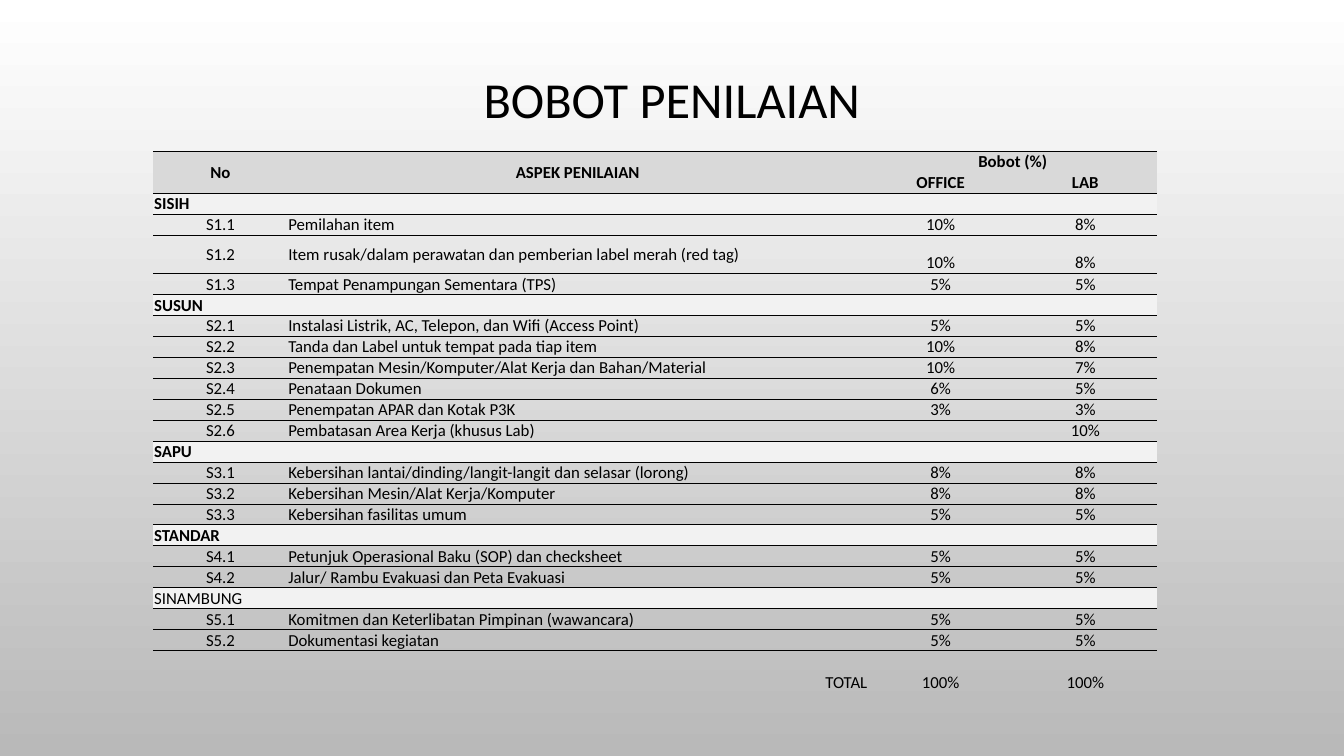
from dataclasses import dataclass
from typing import Optional

from lxml import etree
from pptx import Presentation
from pptx.dml.color import RGBColor
from pptx.enum.text import MSO_ANCHOR, PP_ALIGN
from pptx.oxml.ns import qn
from pptx.slide import Slide
from pptx.table import Table, _Cell
from pptx.util import Pt

LEFT, CENTER, RIGHT = PP_ALIGN.LEFT, PP_ALIGN.CENTER, PP_ALIGN.RIGHT
MIDDLE, BOTTOM = MSO_ANCHOR.MIDDLE, MSO_ANCHOR.BOTTOM


@dataclass(frozen=True)
class Theme:
    font: str = "Calibri"
    title_size: float = 36
    body_size: float = 12
    ink: str = "000000"
    header: str = "D9D9D9"
    section: str = "F2F2F2"
    bg_top: str = "FFFFFF"
    bg_bottom: str = "B9B9B9"
    rule_width: float = 0.5
    cell_inset: float = 0.55


@dataclass(frozen=True)
class Aspect:
    name: str
    office: str
    lab: str
    height: float = 14.94


@dataclass(frozen=True)
class Section:
    name: str
    aspects: tuple[Aspect, ...]
    span: int = 2
    bold: bool = True


THEME = Theme()
COLUMN_WIDTHS = (95.8, 414.7, 103.7, 103)
ROW_HEIGHT = 14.94
SECTIONS = (
    Section("SISIH", (
        Aspect("Pemilahan item", "10%", "8%"),
        Aspect("Item rusak/dalam perawatan dan pemberian label merah (red tag)", "10%", "8%", 27.4),
        Aspect("Tempat Penampungan Sementara (TPS)", "5%", "5%"),
    ), span=4),
    Section("SUSUN", (
        Aspect("Instalasi Listrik, AC, Telepon, dan Wifi (Access Point)", "5%", "5%"),
        Aspect("Tanda dan Label untuk tempat pada tiap item", "10%", "8%"),
        Aspect("Penempatan Mesin/Komputer/Alat Kerja dan Bahan/Material", "10%", "7%"),
        Aspect("Penataan Dokumen", "6%", "5%"),
        Aspect("Penempatan APAR dan Kotak P3K", "3%", "3%"),
        Aspect("Pembatasan Area Kerja (khusus Lab)", "", "10%"),
    ), span=4),
    Section("SAPU", (
        Aspect("Kebersihan lantai/dinding/langit-langit dan selasar (lorong)", "8%", "8%"),
        Aspect("Kebersihan Mesin/Alat Kerja/Komputer", "8%", "8%"),
        Aspect("Kebersihan fasilitas umum", "5%", "5%"),
    )),
    Section("STANDAR", (
        Aspect("Petunjuk Operasional Baku (SOP) dan checksheet", "5%", "5%"),
        Aspect("Jalur/ Rambu Evakuasi dan Peta Evakuasi", "5%", "5%"),
    )),
    Section("SINAMBUNG", (
        Aspect("Komitmen dan Keterlibatan Pimpinan (wawancara)", "5%", "5%"),
        Aspect("Dokumentasi kegiatan", "5%", "5%"),
    ), bold=False),
)


def add_run(p, text: str, size: float, bold: bool = False) -> None:
    r = p.add_run()
    r.text = text
    r.font.name = THEME.font
    r.font.size = Pt(size)
    r.font.bold = bold
    r.font.color.rgb = RGBColor.from_string(THEME.ink)


def set_borders(cell: _Cell, edges: str) -> None:
    tc_pr = cell._tc.get_or_add_tcPr()
    for edge in "LRTB":
        ln = etree.SubElement(tc_pr, qn(f"a:ln{edge}"), w=str(Pt(THEME.rule_width)))
        if edge in edges:
            fill = etree.SubElement(ln, qn("a:solidFill"))
            etree.SubElement(fill, qn("a:srgbClr"), val=THEME.ink)
        else:
            etree.SubElement(ln, qn("a:noFill"))


def style_cell(cell: _Cell, edges: str, fill: Optional[str]) -> None:
    set_borders(cell, edges)
    if fill:
        cell.fill.solid()
        cell.fill.fore_color.rgb = RGBColor.from_string(fill)
    else:
        cell.fill.background()
    cell.margin_left = cell.margin_right = cell.margin_top = Pt(THEME.cell_inset)
    cell.margin_bottom = Pt(0)


def style_row(table: Table, row: int, edges: str, fill: Optional[str] = None) -> None:
    for col in range(len(COLUMN_WIDTHS)):
        style_cell(table.cell(row, col), edges, fill)


def write(cell: _Cell, text: str, align=CENTER, anchor=MIDDLE, bold: bool = False) -> None:
    cell.vertical_anchor = anchor
    p = cell.text_frame.paragraphs[0]
    p.alignment = align
    if text:
        add_run(p, text, THEME.body_size, bold)


def size_empty_cells(table: Table) -> None:
    for cell in table.iter_cells():
        p = cell.text_frame.paragraphs[0]
        if not p.runs:
            etree.SubElement(p._p, qn("a:endParaRPr"), sz=str(int(THEME.body_size * 100)))


def write_header(table: Table) -> None:
    style_row(table, 0, "T", THEME.header)
    style_row(table, 1, "B", THEME.header)
    for col, label in enumerate(("No", "ASPEK PENILAIAN")):
        cell = table.cell(0, col)
        cell.merge(table.cell(1, col))
        write(cell, label, bold=True)
    table.cell(0, 2).merge(table.cell(0, 3))
    write(table.cell(0, 2), "Bobot (%)", bold=True)
    for col, label in enumerate(("OFFICE", "LAB"), 2):
        write(table.cell(1, col), label, bold=True)


def write_section(table: Table, row: int, number: int, section: Section) -> int:
    style_row(table, row, "TB", THEME.section)
    cell = table.cell(row, 0)
    cell.merge(table.cell(row, section.span - 1))
    write(cell, section.name, LEFT, bold=section.bold)
    for index, aspect in enumerate(section.aspects, 1):
        row += 1
        style_row(table, row, "TB")
        table.rows[row].height = Pt(aspect.height)
        write(table.cell(row, 0), f"S{number}.{index}")
        write(table.cell(row, 1), aspect.name, LEFT)
        write(table.cell(row, 2), aspect.office, anchor=BOTTOM)
        write(table.cell(row, 3), aspect.lab, anchor=BOTTOM)
    return row + 1


def write_total(table: Table, row: int) -> None:
    style_row(table, row, "T")
    style_row(table, row + 1, "")
    write(table.cell(row + 1, 1), "TOTAL", RIGHT)
    for col in (2, 3):
        write(table.cell(row + 1, col), "100%", anchor=BOTTOM)


def add_title(s: Slide) -> None:
    tf = s.shapes.add_textbox(Pt(72), Pt(49), Pt(816), Pt(47.5)).text_frame
    tf.word_wrap = True
    tf.vertical_anchor = MIDDLE
    p = tf.paragraphs[0]
    p.alignment = CENTER
    p.line_spacing = 0.9
    add_run(p, "BOBOT PENILAIAN", THEME.title_size)


def add_weights(s: Slide) -> None:
    row_count = 4 + sum(1 + len(section.aspects) for section in SECTIONS)
    sp = s.shapes.add_table(row_count, len(COLUMN_WIDTHS), Pt(109.6), Pt(108),
                            Pt(sum(COLUMN_WIDTHS)), Pt(row_count * ROW_HEIGHT))
    table = sp.table
    table.first_row = table.horz_banding = False
    for column, width in zip(table.columns, COLUMN_WIDTHS):
        column.width = Pt(width)
    for table_row in table.rows:
        table_row.height = Pt(ROW_HEIGHT)
    write_header(table)
    row = 2
    for number, section in enumerate(SECTIONS, 1):
        row = write_section(table, row, number, section)
    write_total(table, row)
    size_empty_cells(table)


def main() -> None:
    prs = Presentation()
    prs.slide_width, prs.slide_height = Pt(960), Pt(540)
    s = prs.slides.add_slide(prs.slide_layouts[6])
    fill = s.background.fill
    fill.gradient()
    fill.gradient_angle = 270
    for stop, color in zip(fill.gradient_stops, (THEME.bg_top, THEME.bg_bottom)):
        stop.color.rgb = RGBColor.from_string(color)
    add_title(s)
    add_weights(s)
    prs.save("out.pptx")


if __name__ == "__main__":
    main()
